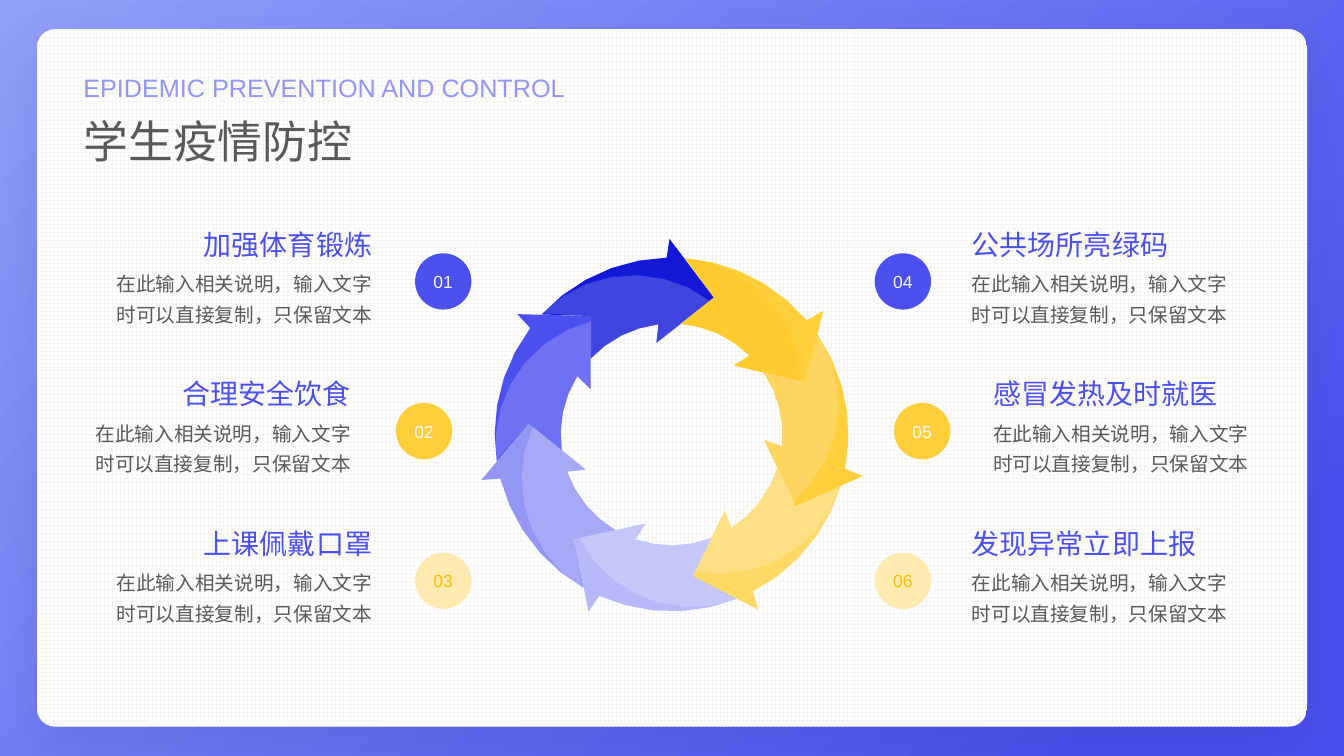
from dataclasses import dataclass
from math import cos, radians, sin

from lxml.etree import SubElement
from pptx import Presentation
from pptx.dml.color import RGBColor as RGB
from pptx.enum.dml import MSO_PATTERN
from pptx.enum.shapes import MSO_SHAPE as SHAPE
from pptx.enum.text import MSO_ANCHOR as ANCHOR, PP_ALIGN as ALIGN
from pptx.oxml.ns import qn
from pptx.util import Inches, Pt


@dataclass(frozen=True)
class Theme:
    font: str = "Arial"
    title: float = 32
    kicker: float = 18
    heading: float = 20
    body: float = 14
    badge: float = 12.5
    sky: str = "929FF8"
    blue: str = "4C50EE"
    navy: str = "1419D7"
    lilac: str = "9496F5"
    mist: str = "B7B9F8"
    yellow: str = "FFCE3B"
    straw: str = "FFD966"
    cream: str = "FFEBB1"
    amber: str = "FFC000"
    ice: str = "F7F9FF"
    white: str = "FFFFFF"
    grid: str = "F5F5F5"
    gray: str = "595959"
    shadow: str = "002060"


T = Theme()
WIDTH, HEIGHT = Inches(13.333), Inches(7.5)
NOTE = "在此输入相关说明，输入文字时可以直接复制，只保留文本"
LEFT_ITEMS = [("01", "加强体育锻炼"), ("02", "合理安全饮食"), ("03", "上课佩戴口罩")]
RIGHT_ITEMS = [("04", "公共场所亮绿码"), ("05", "感冒发热及时就医"), ("06", "发现异常立即上报")]
BADGES = [(T.blue, T.ice), (T.yellow, T.ice), (T.cream, T.amber)]
ARROWS = [(T.navy, T.ice), (T.yellow, T.amber), (T.yellow, T.ice), (T.straw, T.ice),
          (T.mist, T.white), (T.lilac, T.ice), (T.blue, T.ice)]
STEP = 360 / len(ARROWS)
RING_COL, RING_ROW = 49.97, 57.47
OUTER, INNER, TIP = 23.4, 14.67, 18.95


def cols(n):
    return round(WIDTH * n / 100)


def rows(n):
    return round(HEIGHT * n / 100)


def write(tf, text, size, color, align=ALIGN.LEFT, anchor=ANCHOR.TOP, spacing=None, inset=None):
    tf.word_wrap = True
    tf.vertical_anchor = anchor
    if inset is not None:
        tf.margin_left = tf.margin_right = tf.margin_top = tf.margin_bottom = inset
    p = tf.paragraphs[0]
    p.alignment = align
    if spacing:
        p.line_spacing = spacing
    r = p.add_run()
    r.text = text
    r.font.name = T.font
    r.font.size = Pt(size)
    r.font.color.rgb = RGB.from_string(color)


def paint(sp, color, alpha=None):
    sp.shadow.inherit = False
    sp.line.fill.background()
    sp.fill.solid()
    sp.fill.fore_color.rgb = RGB.from_string(color)
    if alpha:
        clr = sp.element.spPr.find(qn("a:solidFill"))[0]
        SubElement(clr, qn("a:alpha"), val=str(alpha * 1000))


def text_box(s, left, top, width, height, text, size, color, **fmt):
    sp = s.shapes.add_textbox(cols(left), rows(top), cols(width), rows(height))
    write(sp.text_frame, text, size, color, **fmt)


def polar(radius, angle, center=(cols(RING_COL), rows(RING_ROW))):
    a = radians(angle)
    return (center[0] + round(rows(radius) * sin(a)), center[1] - round(rows(radius) * cos(a)))


def arc(radius, start, end, *center, count=4):
    return [polar(radius, start + (end - start) * i / count, *center) for i in range(count + 1)]


def outline(shapes, points, color, alpha=None):
    builder = shapes.build_freeform(*points[0], scale=1.0)
    builder.add_line_segments(points[1:], close=True)
    paint(builder.convert_to_shape(), color, alpha)


def ring(s):
    group = s.shapes.add_group_shape()
    for i, (color, _) in enumerate(ARROWS):
        turn = i * STEP
        outline(group.shapes,
                arc(INNER, turn - 46.8, turn - 6.8)
                + [polar(12.27, turn - 9.4), polar(TIP, turn + 17.2),
                   polar(25.87, turn - 0.6)]
                + arc(OUTER, turn - 1.6, turn - 47.3, count=5)
                + [polar(TIP, turn + 17.2 - STEP)], color)
    for i, (_, shine) in enumerate(ARROWS):
        turn = i * STEP
        outline(group.shapes,
                arc(16.8, turn - 45.6, turn + 37.2, polar(6.63, turn - 50), count=7)
                + [polar(12.27, turn - 9.4)]
                + arc(INNER, turn - 6.8, turn - 46.8)
                + [polar(TIP, turn + 17.2 - STEP)], shine, alpha=20)


def background(s):
    fill = s.background.fill
    fill.gradient()
    fill.gradient_angle = 315
    for stop, position, color in zip(fill.gradient_stops, (0, 0.88), (T.sky, T.blue)):
        stop.position = position
        stop.color.rgb = RGB.from_string(color)


def card(s):
    sp = s.shapes.add_shape(SHAPE.ROUNDED_RECTANGLE, cols(2.75), rows(3.87), cols(94.5), rows(92.25))
    sp.adjustments[0] = 0.026
    paint(sp, T.white)
    sp.fill.patterned()
    sp.fill.pattern = MSO_PATTERN.LARGE_GRID
    sp.fill.fore_color.rgb = RGB.from_string(T.grid)
    sp.fill.back_color.rgb = RGB.from_string(T.white)
    effects = sp.element.spPr.find(qn("a:effectLst"))
    shadow = SubElement(effects, qn("a:outerShdw"), blurRad=str(Pt(40)), dist=str(Pt(17)),
                        dir="5400000", algn="t", rotWithShape="0")
    clr = SubElement(shadow, qn("a:srgbClr"), val=T.shadow)
    SubElement(clr, qn("a:alpha"), val="11000")
    sp.element.getparent().insert(2, sp.element)


def badge(s, center, top, number, fill, color):
    size = rows(7.45)
    sp = s.shapes.add_shape(SHAPE.OVAL, cols(center) - size // 2, rows(top), size, size)
    paint(sp, fill)
    write(sp.text_frame, number, T.badge, color, align=ALIGN.CENTER, anchor=ANCHOR.MIDDLE, inset=0)


def item_column(s, items, side):
    align = ALIGN.RIGHT if side < 0 else ALIGN.LEFT
    for i, ((number, heading), colors) in enumerate(zip(items, BADGES)):
        top = 29.4 + 19.8 * i
        middle = i == 1
        edge = 50 + side * (21.57 + 1.58 * middle)
        badge(s, 50.08 + side * (17.1 + 1.43 * middle), top + 4.1, number, *colors)
        for width, drop, height, text, size, color, spacing in (
                (21.3, 5, 9.07, NOTE, T.body, T.gray, 1.3),
                (20.1, 0, 5.87, heading, T.heading, T.blue, None)):
            left = edge - width if side < 0 else edge
            text_box(s, left, top + drop, width, height, text, size, color,
                     align=align, spacing=spacing)


def titles(s):
    sp = s.shapes.title
    sp.left, sp.top, sp.width, sp.height = cols(5.47), rows(14.4), cols(32), rows(8.53)
    write(sp.text_frame, "学生疫情防控", T.title, T.gray)
    text_box(s, 5.47, 8.93, 48, 5.33, "EPIDEMIC PREVENTION AND CONTROL", T.kicker, T.lilac)


def main():
    prs = Presentation()
    prs.slide_width, prs.slide_height = WIDTH, HEIGHT
    s = prs.slides.add_slide(prs.slide_layouts[5])
    background(s)
    card(s)
    ring(s)
    item_column(s, LEFT_ITEMS, -1)
    item_column(s, RIGHT_ITEMS, 1)
    titles(s)
    prs.save("out.pptx")


if __name__ == "__main__":
    main()
